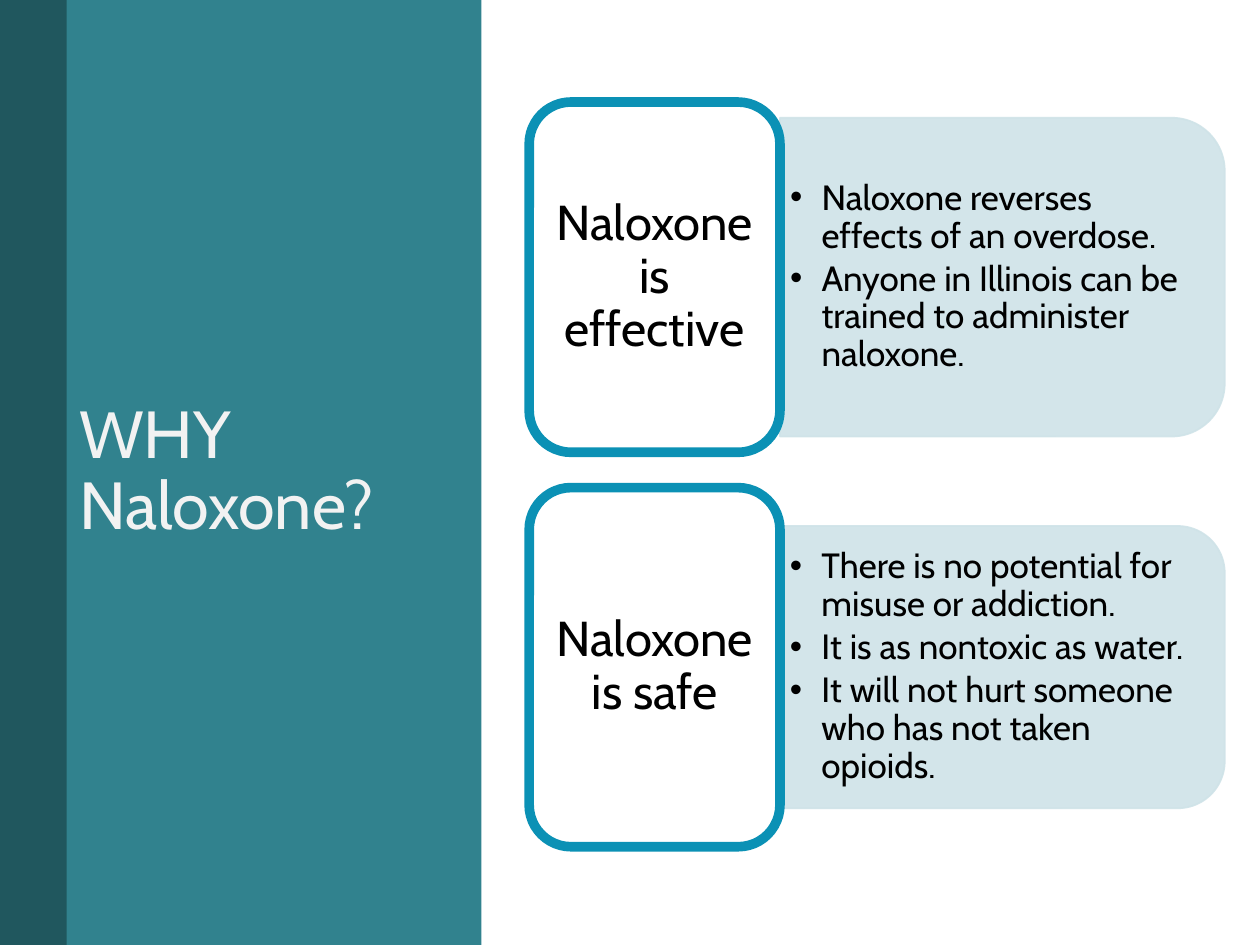
from dataclasses import dataclass

from lxml.etree import SubElement
from pptx import Presentation
from pptx.dml.color import RGBColor
from pptx.enum.shapes import MSO_SHAPE
from pptx.enum.text import MSO_ANCHOR, PP_ALIGN
from pptx.oxml.ns import qn
from pptx.util import Inches, Pt

TEAL = RGBColor(0x31, 0x82, 0x8E)
DARK_TEAL = RGBColor(0x20, 0x57, 0x5E)
PALE_BLUE = RGBColor(0xCF, 0xE3, 0xE8)
BLUE = RGBColor(0x0B, 0x91, 0xB5)
OFF_WHITE = RGBColor(0xF2, 0xF2, 0xF2)
WHITE = RGBColor(0xFF, 0xFF, 0xFF)
BLACK = RGBColor(0, 0, 0)

FONT = "Cabin"
CARD_LEFT, CARD_WIDTH, CARD_INSET = 4.2, 1.99, 0.1
PANEL_LEFT, PANEL_WIDTH = CARD_LEFT + CARD_WIDTH, 3.53


@dataclass
class Reason:
    heading: str
    points: list[str]
    top: float
    height: float
    panel_height: float
    body_width: float
    body_height: float

    @property
    def middle(self) -> float:
        return self.top + self.height / 2


REASONS = [
    Reason("Naloxone is effective",
           ["Naloxone reverses effects of an overdose.",
            "Anyone in Illinois can be trained to administer naloxone."],
           0.81, 2.78, 2.53, 3.41, 2.28),
    Reason("Naloxone is safe",
           ["There is no potential for misuse or addiction.",
            "It is as nontoxic as water.",
            "It will not hurt someone who has not taken opioids."],
           3.87, 2.85, 2.24, 3.43, 2.02),
]


def add_box(slide, kind, left: float, top: float, width: float, height: float,
            fill: RGBColor):
    sp = slide.shapes.add_shape(kind, Inches(left), Inches(top),
                                Inches(width), Inches(height))
    sp.shadow.inherit = False
    sp.fill.solid()
    sp.fill.fore_color.rgb = fill
    sp.line.fill.background()
    return sp


def add_text(slide, lines: list[str], left: float, top: float, width: float,
             height: float, size: float, color: RGBColor,
             margins: tuple[float, float] = (0.1, 0.05), space_after: float = 0,
             align=PP_ALIGN.LEFT):
    """Add a wrapped, vertically centred text box; margins are side and top/bottom."""
    tf = slide.shapes.add_textbox(Inches(left), Inches(top),
                                  Inches(width), Inches(height)).text_frame
    tf.word_wrap = True
    tf.vertical_anchor = MSO_ANCHOR.MIDDLE
    tf.margin_left = tf.margin_right = Inches(margins[0])
    tf.margin_top = tf.margin_bottom = Inches(margins[1])
    tf.text = "\n".join(lines)
    for p in tf.paragraphs:
        p.alignment = align
        p.line_spacing = 0.9
        p.space_after = Pt(space_after)
        for r in p.runs:
            r.font.name = FONT
            r.font.size = Pt(size)
            r.font.color.rgb = color
    return tf


def add_bullet(p) -> None:
    pPr = p._p.get_or_add_pPr()
    pPr.set("marL", str(Inches(0.25)))
    pPr.set("indent", str(Inches(-0.25)))
    SubElement(pPr, qn("a:buFont"), typeface="Arial")
    SubElement(pPr, qn("a:buChar"), char="•")


def add_panel(slide, reason: Reason) -> None:
    """Add the pale panel, turned so that its rounded corners face right."""
    width, height = reason.panel_height, PANEL_WIDTH
    sp = add_box(slide, MSO_SHAPE.ROUND_2_SAME_RECTANGLE,
                 PANEL_LEFT + (PANEL_WIDTH - width) / 2,
                 reason.middle - height / 2, width, height, PALE_BLUE)
    sp.rotation = 90
    sp.line.color.rgb = PALE_BLUE
    sp.line.width = Pt(1)
    for color in sp._element.spPr.iter(qn("a:srgbClr")):
        SubElement(color, qn("a:alpha"), val="90000")


def add_reason(slide, reason: Reason) -> None:
    add_panel(slide, reason)
    body = add_text(slide, reason.points, PANEL_LEFT,
                    reason.middle - reason.body_height / 2,
                    reason.body_width, reason.body_height, 20, BLACK,
                    margins=(0.08, 0.04), space_after=3)
    for p in body.paragraphs:
        add_bullet(p)

    card = add_box(slide, MSO_SHAPE.ROUNDED_RECTANGLE, CARD_LEFT, reason.top,
                   CARD_WIDTH, reason.height, WHITE)
    card.line.color.rgb = BLUE
    card.line.width = Pt(5.5)
    add_text(slide, [reason.heading], CARD_LEFT + CARD_INSET,
             reason.top + CARD_INSET, CARD_WIDTH - 2 * CARD_INSET,
             reason.height - 2 * CARD_INSET, 28, BLACK,
             margins=(0.08, 0.06), space_after=9.8, align=PP_ALIGN.CENTER)


def main() -> None:
    prs = Presentation()
    prs.slide_width, prs.slide_height = Inches(10), Inches(7.5)
    slide = prs.slides.add_slide(prs.slide_layouts[6])
    add_box(slide, MSO_SHAPE.RECTANGLE, 0, 0, 3.82, 7.5, TEAL)
    add_box(slide, MSO_SHAPE.RECTANGLE, 0, 0, 0.53, 7.5, DARK_TEAL)
    add_text(slide, ["WHY Naloxone?"], 0.53, 1.11, 3.12, 5.28, 38, OFF_WHITE)
    for reason in REASONS:
        add_reason(slide, reason)
    prs.save("out.pptx")


if __name__ == "__main__":
    main()
